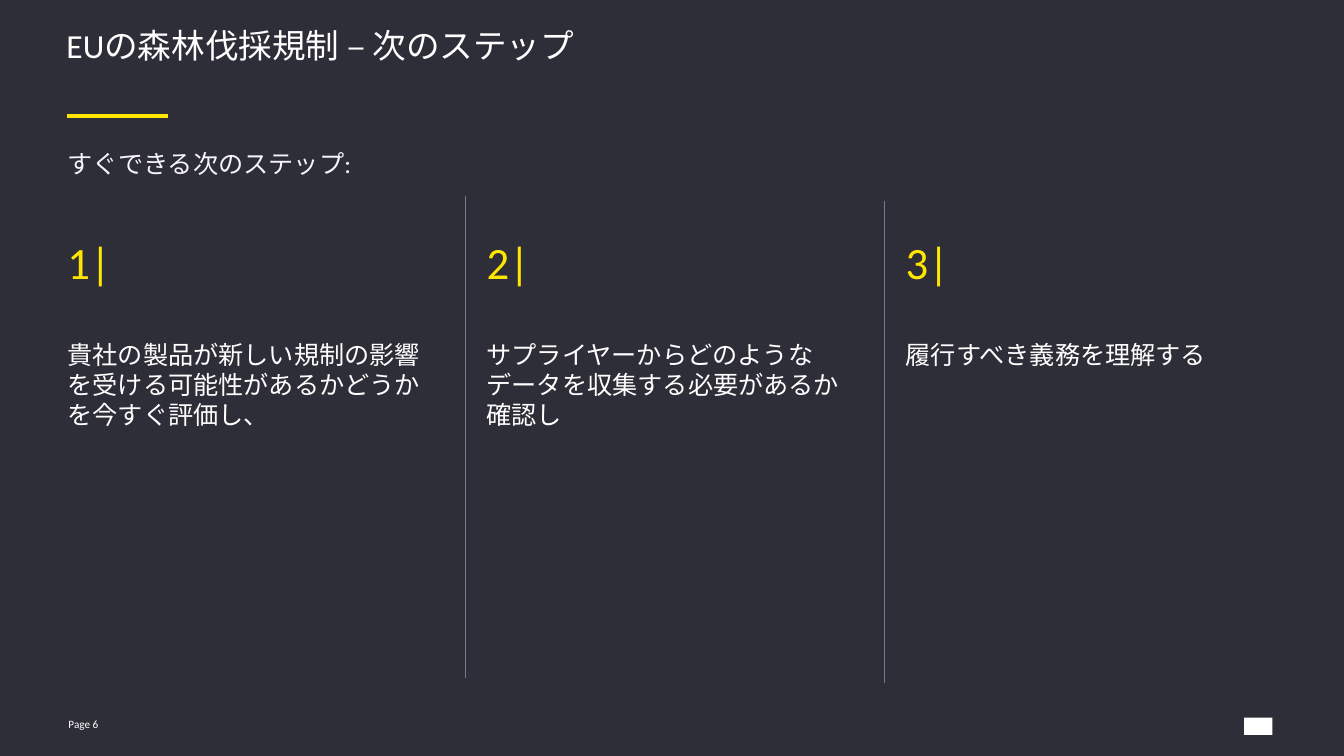
from pptx import Presentation
from pptx.dml.color import RGBColor
from pptx.enum import lang, shapes, text
from pptx.oxml.ns import qn
from pptx.util import Inches, Pt
from lxml import etree

DARK = RGBColor(0x2E, 0x2E, 0x38)
WHITE = RGBColor(0xFF, 0xFF, 0xFF)
PALE = RGBColor(0xF6, 0xF6, 0xFA)
YELLOW = RGBColor(0xFF, 0xE6, 0x00)
GREY = RGBColor(0x79, 0x79, 0x91)

WIDE, HIGH = 13.34, 7.5
LEFT, FULL, DEEP = 0.67, 12.01, 4.75
PITCH, COL = 4.16, 3.74
RULE = 3.95  # from a column's left edge to the divider after it

STEPS = [
    "貴社の製品が新しい規制の影響を受ける可能性があるかどうかを今すぐ評価し、",
    "サプライヤーからどのようなデータを収集する必要があるか確認し",
    "履行すべき義務を理解する",
]


def add_text(slide, box, lines, anchor=text.MSO_ANCHOR.TOP):
    """Fill a box with lines of (words, size, colour) and return its paragraphs."""
    frame = slide.shapes.add_textbox(*map(Inches, box)).text_frame
    frame.word_wrap = True
    frame.vertical_anchor = anchor
    frame.margin_left = frame.margin_right = 0
    frame.margin_top = frame.margin_bottom = 0
    for i, (words, size, color) in enumerate(lines):
        para = frame.paragraphs[0] if i == 0 else frame.add_paragraph()
        para.text = words
        font = para.runs[0].font
        font.name = "Calibri"
        font.size = Pt(size)
        font.color.rgb = color
        font.language_id = lang.MSO_LANGUAGE_ID.JAPANESE
    return frame.paragraphs


def add_line(slide, start, end, color, width):
    line = slide.shapes.add_connector(
        shapes.MSO_CONNECTOR.STRAIGHT, *map(Inches, start + end))
    line.line.color.rgb = color
    line.line.width = Pt(width)
    etree.SubElement(line._element.spPr, qn("a:effectLst"))


def add_head(slide, left, top):
    title = add_text(slide, (left - 0.01, top, FULL, 0.65),
                     [("EUの森林伐採規制 – 次のステップ", 24, WHITE)])
    title[0].line_spacing = 0.85
    add_line(slide, (left, top + 0.84), (left + 1, top + 0.84), YELLOW, 3.25)
    lead = add_text(slide, (left, top + 1.16, FULL, DEEP),
                    [("すぐできる次のステップ:", 18, PALE)])
    lead[0].space_after = Pt(8)


def add_step(slide, box, number, words):
    head, body = add_text(slide, box, [(f"{number}|", 32, YELLOW),
                                       (words, 18, WHITE)])
    head.space_after = body.space_before = body.space_after = Pt(18)


def add_steps(slide, left, top):
    for i, words in enumerate(STEPS):
        x = left + i * PITCH
        add_step(slide, (x, top, COL, DEEP), i + 1, words)
        if i < len(STEPS) - 1:
            y = top - 0.39 + i * 0.05
            add_line(slide, (x + RULE, y), (x + RULE, y + 4.79), GREY, 0.75)


def add_foot(slide, left, top):
    add_text(slide, (left, top, 0.73, 0.2), [("Page 6", 8, WHITE)],
             text.MSO_ANCHOR.MIDDLE)
    mark = slide.shapes.add_shape(
        shapes.MSO_SHAPE.RECTANGLE,
        *map(Inches, (left + 11.67, top + 0.04, 0.28, 0.17)))
    mark.shadow.inherit = False
    mark.fill.solid()
    mark.fill.fore_color.rgb = WHITE
    mark.line.fill.background()


def main():
    deck = Presentation()
    deck.slide_width, deck.slide_height = Inches(WIDE), Inches(HIGH)
    slide = deck.slides.add_slide(deck.slide_layouts[6])
    slide.background.fill.solid()
    slide.background.fill.fore_color.rgb = DARK
    add_head(slide, LEFT, 0.31)
    add_steps(slide, LEFT, 2.33)
    add_foot(slide, LEFT + 0.01, 7.08)
    deck.save("out.pptx")


if __name__ == "__main__":
    main()
